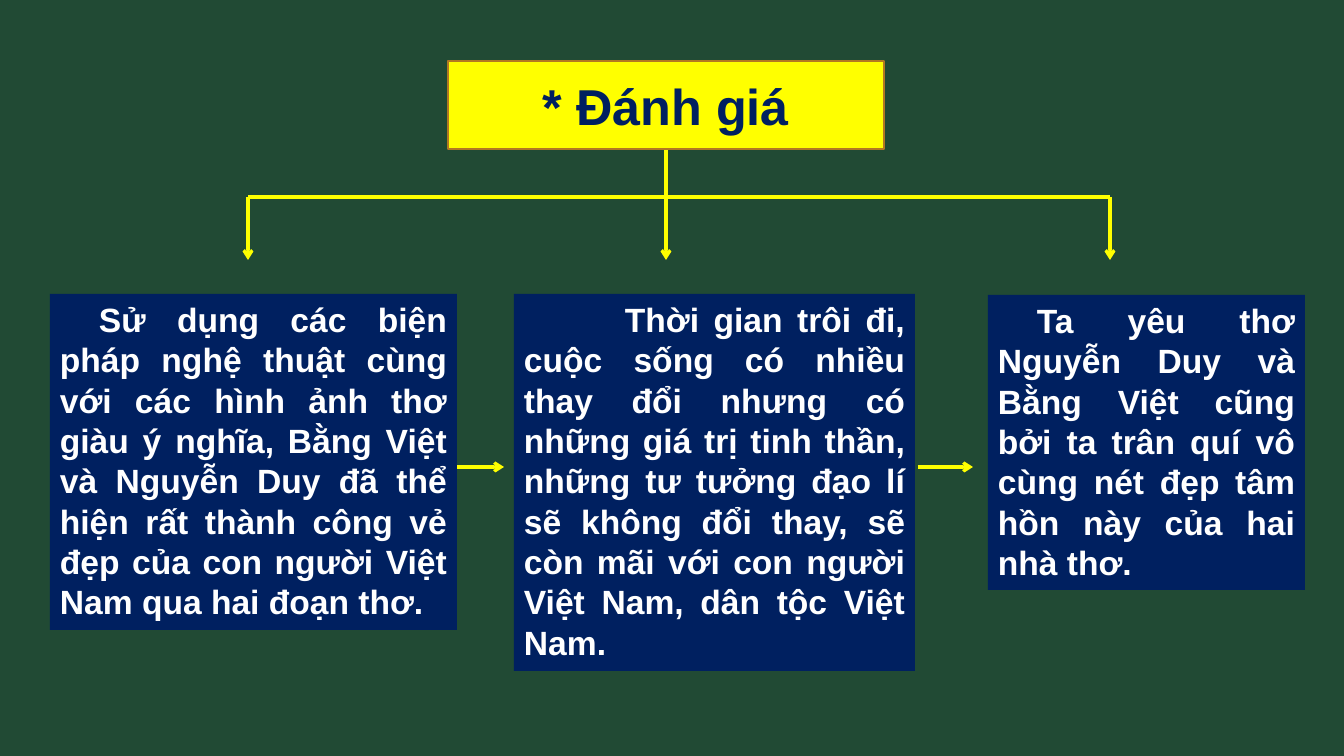
import pptx
import pptx.util
import pptx.dml.color
import pptx.enum.shapes
import pptx.enum.text
import lxml.etree

PX = 914400 / 100.8
ALIGN = pptx.enum.text.PP_ALIGN
ANCHOR = pptx.enum.text.MSO_ANCHOR
NAVY, YELLOW, WHITE = "002060", "FFFF00", "FFFFFF"


def rgb(value):
    return pptx.dml.color.RGBColor.from_string(value)


def write(frame, text, size, color, align, anchor, indent=0):
    frame.word_wrap = True
    frame.vertical_anchor = anchor
    paragraph = frame.paragraphs[0]
    paragraph.alignment = align
    paragraph._p.get_or_add_pPr().set("indent", str(round(indent * PX)))
    run = paragraph.add_run()
    run.text = text
    run.font.name = "Arial"
    run.font.size = pptx.util.Pt(size)
    run.font.bold = True
    run.font.color.rgb = rgb(color)


deck = pptx.Presentation()
deck.slide_width = round(1344 * PX)
deck.slide_height = round(756 * PX)
slide = deck.slides.add_slide(deck.slide_layouts[6])
slide.background.fill.solid()
slide.background.fill.fore_color.rgb = rgb("214A34")

branch_y, flow_y = 197, 467
left_x, middle_x, right_x = 248, 666, 1110
branches = [
    (middle_x, 149, middle_x, branch_y, False),
    (left_x, branch_y, right_x, branch_y, False),
    (450, flow_y, 504, flow_y, True),
    (918, flow_y, 973, flow_y, True),
]
branches += [(x, branch_y, x, 260, True) for x in (left_x, middle_x, right_x)]

for x1, y1, x2, y2, has_arrow in branches:
    branch = slide.shapes.add_connector(
        pptx.enum.shapes.MSO_CONNECTOR.STRAIGHT,
        *[round(length * PX) for length in (x1, y1, x2, y2)])
    branch.line.color.rgb = rgb(YELLOW)
    branch.line.width = pptx.util.Pt(2.25)
    if has_arrow:
        lxml.etree.SubElement(branch.line._get_or_add_ln(), pptx.oxml.ns.qn("a:tailEnd"), type="arrow")
    lxml.etree.SubElement(branch._element.spPr, pptx.oxml.ns.qn("a:effectLst"))

heading_format = dict(size=36, color=NAVY, align=ALIGN.CENTER, anchor=ANCHOR.MIDDLE)
point_format = dict(size=24, color=WHITE, align=ALIGN.JUSTIFY, anchor=ANCHOR.TOP)
panels = [
    ((448, 61, 436, 88), YELLOW, "B27822", "* Đánh giá", heading_format),
    ((50, 294, 407, 336), NAVY, None,
     "Sử dụng các biện pháp nghệ thuật cùng với các hình ảnh thơ giàu ý nghĩa, "
     "Bằng Việt và Nguyễn Duy đã thể hiện rất thành công vẻ đẹp của con người "
     "Việt Nam qua hai đoạn thơ.", dict(point_format, indent=39)),
    ((514, 294, 401, 377), NAVY, None,
     "Thời gian trôi đi, cuộc sống có nhiều thay đổi nhưng có những giá trị tinh thần, "
     "những tư tưởng đạo lí sẽ không đổi thay, sẽ còn mãi với con người Việt Nam, "
     "dân tộc Việt Nam.", dict(point_format, indent=101)),
    ((988, 295, 317, 295), NAVY, None,
     "Ta yêu thơ Nguyễn Duy và Bằng Việt cũng bởi ta trân quí vô cùng nét đẹp tâm hồn "
     "này của hai nhà thơ.", dict(point_format, indent=39)),
]

for bounds, fill, border, text, text_format in panels:
    panel = slide.shapes.add_shape(
        pptx.enum.shapes.MSO_SHAPE.RECTANGLE, *[round(length * PX) for length in bounds])
    panel.shadow.inherit = False
    panel.fill.solid()
    panel.fill.fore_color.rgb = rgb(fill)
    if border:
        panel.line.color.rgb = rgb(border)
        panel.line.width = pptx.util.Pt(1)
    else:
        panel.line.fill.background()
    write(panel.text_frame, text, **text_format)

deck.save("out.pptx")
